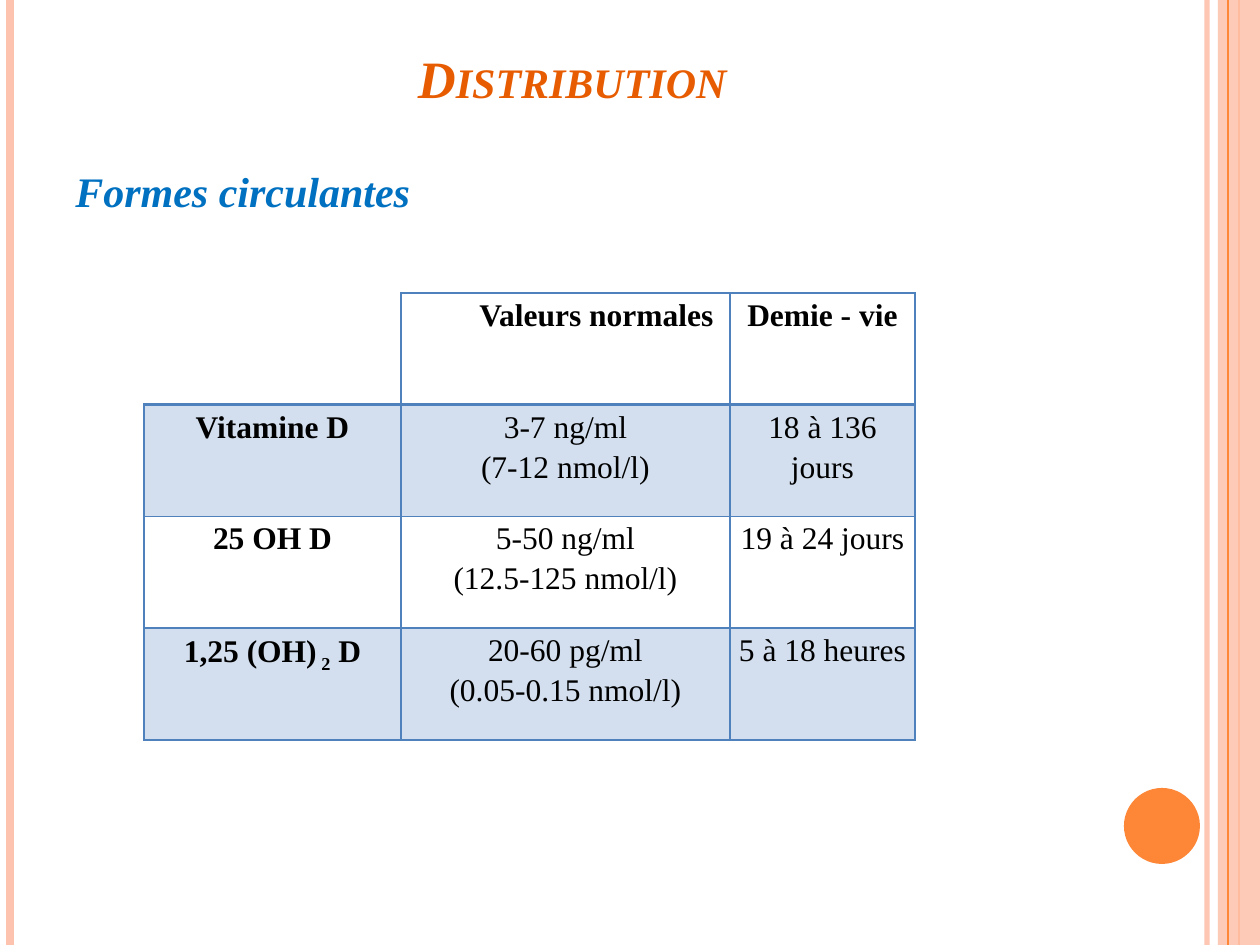
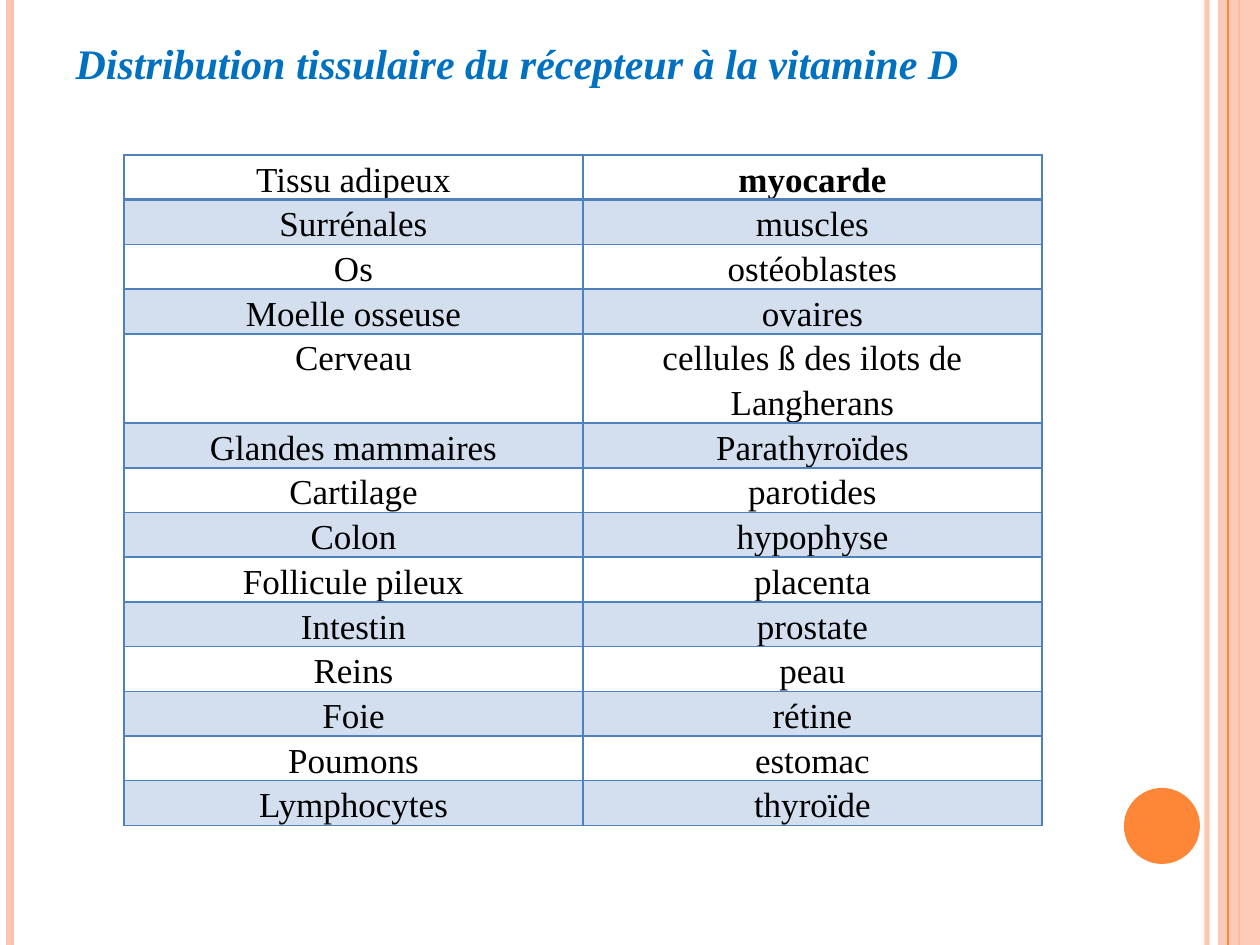
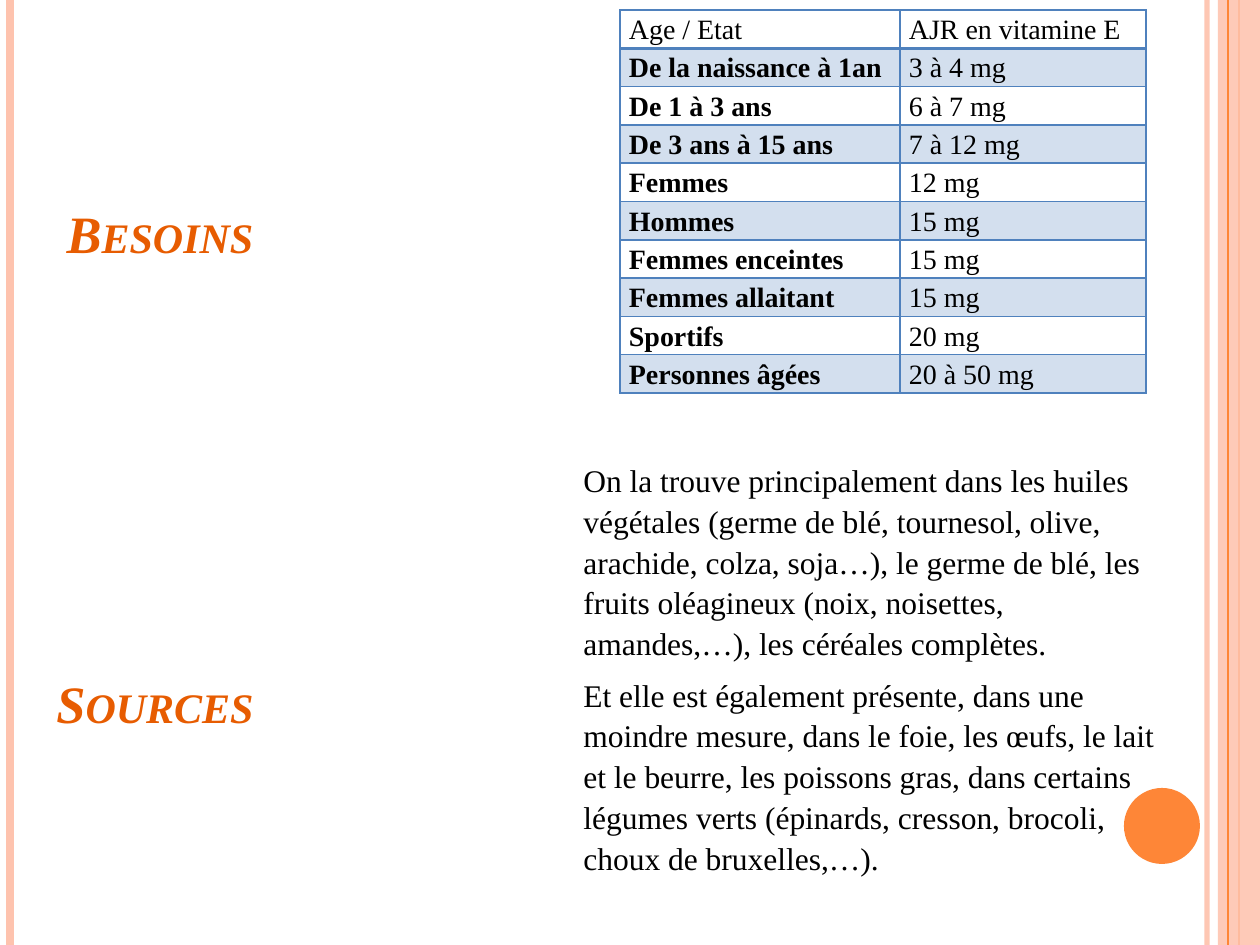
from dataclasses import dataclass

from lxml.etree import SubElement
from pptx import Presentation
from pptx.dml.color import RGBColor
from pptx.enum.shapes import MSO_CONNECTOR, MSO_SHAPE
from pptx.enum.text import MSO_ANCHOR, MSO_AUTO_SIZE, PP_ALIGN
from pptx.oxml.ns import qn
from pptx.util import Emu, Pt

SCALE = 914400 / 126
WIDE, HIGH = 1260, 945
FONT = "Times New Roman"
PEACH, ORANGE, RUST = "FEC3AE", "FE8637", "E75C01"
BLUE, BLACK, GRID, BAND = "0070C0", "000000", "4F81BD", "D3DFEE"


@dataclass(frozen=True)
class Box:
    x: int
    y: int
    w: int
    h: int


@dataclass(frozen=True)
class Style:
    size: int
    color: str
    bold: bool = False
    slant: bool = False
    small: bool = False
    lead: float = 1.0
    before: int = 0
    align: PP_ALIGN = PP_ALIGN.LEFT
    anchor: MSO_ANCHOR = MSO_ANCHOR.TOP


@dataclass(frozen=True)
class Stripe:
    x: int
    color: str
    width: float
    alpha: int = 100


@dataclass(frozen=True)
class Grid:
    box: Box
    cols: tuple[int, ...]
    rows: tuple[tuple[str, ...], ...]
    strong: frozenset[tuple[int, int]]
    size: int
    inset: int
    align: PP_ALIGN = PP_ALIGN.CENTER


TITLE = Style(30, RUST, True, True, True, anchor=MSO_ANCHOR.BOTTOM)
CENTRED = Style(30, RUST, True, True, True, align=PP_ALIGN.CENTER, anchor=MSO_ANCHOR.BOTTOM)
HEAD = Style(24, BLUE, True, True, lead=1.08, before=6)
BODY = Style(18, BLACK, lead=1.08, before=6)

FORMS = Grid(
    Box(144, 293, 771, 447),
    (257, 329, 185),
    (
        ("", "Valeurs normales", "Demie - vie"),
        ("Vitamine D", "3-7 ng/ml\n(7-12 nmol/l)", "18 à 136 jours"),
        ("25 OH D", "5-50 ng/ml\n(12.5-125 nmol/l)", "19 à 24 jours"),
        ("1,25 (OH)| 2| D", "20-60 pg/ml\n(0.05-0.15 nmol/l)", "5 à 18 heures"),
    ),
    frozenset({(0, 1), (0, 2), (1, 0), (2, 0), (3, 0)}),
    18,
    8,
)
ORGANS = Grid(
    Box(124, 155, 918, 616),
    (459, 459),
    (
        ("Tissu adipeux", "myocarde"),
        ("Surrénales", "muscles"),
        ("Os", "ostéoblastes"),
        ("Moelle osseuse", "ovaires"),
        ("Cerveau", "cellules ß des ilots de Langherans"),
        ("Glandes mammaires", "Parathyroïdes"),
        ("Cartilage", "parotides"),
        ("Colon", "hypophyse"),
        ("Follicule pileux", "placenta"),
        ("Intestin", "prostate"),
        ("Reins", "peau"),
        ("Foie", "rétine"),
        ("Poumons", "estomac"),
        ("Lymphocytes", "thyroïde"),
    ),
    frozenset({(0, 1)}),
    20,
    9,
)
NEEDS = Grid(
    Box(620, 10, 526, 383),
    (280, 246),
    (
        ("Age / Etat", "AJR en vitamine E"),
        ("De la naissance à 1an", "3 à 4 mg"),
        ("De 1 à 3 ans", "6 à 7 mg"),
        ("De 3 ans à 15 ans", "7 à 12 mg"),
        ("Femmes", "12 mg"),
        ("Hommes", "15 mg"),
        ("Femmes enceintes", "15 mg"),
        ("Femmes allaitant", "15 mg"),
        ("Sportifs", "20 mg"),
        ("Personnes âgées", "20 à 50 mg"),
    ),
    frozenset((row, 0) for row in range(1, 10)),
    16,
    9,
    PP_ALIGN.LEFT,
)
FOODS = (
    "On la trouve principalement dans les huiles végétales (germe de blé, tournesol, olive, "
    "arachide, colza, soja…), le germe de blé, les fruits oléagineux (noix, noisettes, "
    "amandes,…), les céréales complètes.\n"
    "Et elle est également présente, dans une moindre mesure, dans le foie, les œufs, le lait "
    "et le beurre, les poissons gras, dans certains légumes verts (épinards, cresson, brocoli, "
    "choux de bruxelles,…)."
)


def px(size: int) -> Emu:
    return Emu(round(size * SCALE))


def rgb(color: str) -> RGBColor:
    return RGBColor.from_string(color)


def place(box: Box) -> tuple[Emu, Emu, Emu, Emu]:
    return px(box.x), px(box.y), px(box.w), px(box.h)


def fade(shape, alpha: int) -> None:
    tint = next(shape.element.iter(qn("a:srgbClr")))
    SubElement(tint, qn("a:alpha")).set("val", str(alpha * 1000))


def write(frame, text: str, style: Style) -> None:
    for index, line in enumerate(text.split("\n")):
        para = frame.add_paragraph() if index else frame.paragraphs[0]
        para.alignment = style.align
        para.line_spacing = style.lead
        para.space_before = Pt(style.before)
        for part, piece in enumerate(line.split("|")):
            run = para.add_run()
            run.text = piece
            font = run.font
            font.name, font.size = FONT, Pt(style.size)
            font.bold, font.italic = style.bold, style.slant
            font.color.rgb = rgb(style.color)
            props = run._r.get_or_add_rPr()
            if style.small:
                props.set("cap", "small")
            if part % 2:
                props.set("baseline", "-25000")


def set_text(shape, text: str, style: Style) -> None:
    frame = shape.text_frame
    frame.word_wrap = True
    frame.auto_size = MSO_AUTO_SIZE.NONE
    frame.vertical_anchor = style.anchor
    write(frame, text, style)


def add_title(slide, box: Box, text: str, style: Style) -> None:
    title = slide.shapes.title
    title.left, title.top, title.width, title.height = place(box)
    set_text(title, text, style)


def add_text(slide, box: Box, text: str, style: Style) -> None:
    set_text(slide.shapes.add_textbox(*place(box)), text, style)


def add_edge(cell, side: str, width: float) -> None:
    edge = SubElement(cell._tc.get_or_add_tcPr(), qn(f"a:ln{side}"))
    edge.set("w", str(Pt(width)))
    fill = SubElement(edge, qn("a:solidFill"))
    SubElement(fill, qn("a:srgbClr")).set("val", GRID)


def add_grid(slide, grid: Grid):
    frame = slide.shapes.add_table(len(grid.rows), len(grid.cols), *place(grid.box))
    table = frame.table
    table.first_row = table.horz_banding = False
    for col, width in zip(table.columns, grid.cols):
        col.width = px(width)
    for row, texts in enumerate(grid.rows):
        for col, text in enumerate(texts):
            cell = table.cell(row, col)
            heavy = {0: "B", 1: "T"}.get(row)
            for side in "LRTB" if text else "RB":
                add_edge(cell, side, 2.25 if side == heavy else 1)
            if row % 2:
                cell.fill.solid()
                cell.fill.fore_color.rgb = rgb(BAND)
            else:
                cell.fill.background()
            cell.margin_left = cell.margin_right = px(grid.inset)
            cell.margin_top = cell.margin_bottom = 0
            if text:
                bold = (row, col) in grid.strong
                style = Style(grid.size, BLACK, bold, lead=1.15, align=grid.align)
                write(cell.text_frame, text, style)
    return table


def add_stripe(slide, stripe: Stripe):
    x = px(stripe.x)
    line = slide.shapes.add_connector(MSO_CONNECTOR.STRAIGHT, x, 0, x, px(HIGH))
    line.line.color.rgb = rgb(stripe.color)
    line.line.width = Pt(stripe.width)
    SubElement(line.element.spPr, qn("a:effectLst"))
    if stripe.alpha < 100:
        fade(line, stripe.alpha)
    return line


def add_block(slide, kind: MSO_SHAPE, box: Box, color: str):
    shape = slide.shapes.add_shape(kind, *place(box))
    shape.shadow.inherit = False
    shape.fill.solid()
    shape.fill.fore_color.rgb = rgb(color)
    shape.line.fill.background()
    return shape


def dress(deck, slide) -> None:
    parts = [
        add_stripe(slide, Stripe(1207, PEACH, 3, 93)),
        add_stripe(slide, Stripe(10, PEACH, 4.5)),
        add_stripe(slide, Stripe(1239, ORANGE, 1.5)),
        add_block(slide, MSO_SHAPE.RECTANGLE, Box(1218, 0, 42, HIGH), PEACH),
        add_stripe(slide, Stripe(1228, ORANGE, 0.75)),
        add_block(slide, MSO_SHAPE.OVAL, Box(1124, 788, 76, 76), ORANGE),
    ]
    fade(parts[3], 87)
    tree = deck.slide_master.shapes.element
    for number, part in enumerate(parts, 101):
        part.element[0][0].set("id", str(number))
        tree.append(part.element)


def main() -> None:
    deck = Presentation()
    deck.slide_width, deck.slide_height = px(WIDE), px(HIGH)
    layout = deck.slide_layouts.get_by_name("Title Only")
    forms, organs, needs = (deck.slides.add_slide(layout) for _ in range(3))
    dress(deck, forms)

    add_title(forms, Box(63, 38, 1029, 77), "Distribution ", CENTRED)
    add_text(forms, Box(63, 155, 504, 696), "Formes circulantes", HEAD)
    table = add_grid(forms, FORMS)
    para = table.cell(0, 1).text_frame.paragraphs[0]
    para._p.get_or_add_pPr().set("indent", str(px(62)))

    heading = "Distribution tissulaire du récepteur à la vitamine D"
    add_title(organs, Box(63, 27, 1074, 118), heading, HEAD)
    add_grid(organs, ORGANS)

    add_title(needs, Box(54, 112, 457, 158), "Besoins", TITLE)
    add_grid(needs, NEEDS)
    add_text(needs, Box(571, 452, 604, 417), FOODS, BODY)
    add_text(needs, Box(44, 582, 407, 158), "Sources", TITLE)

    deck.save("out.pptx")


if __name__ == "__main__":
    main()
